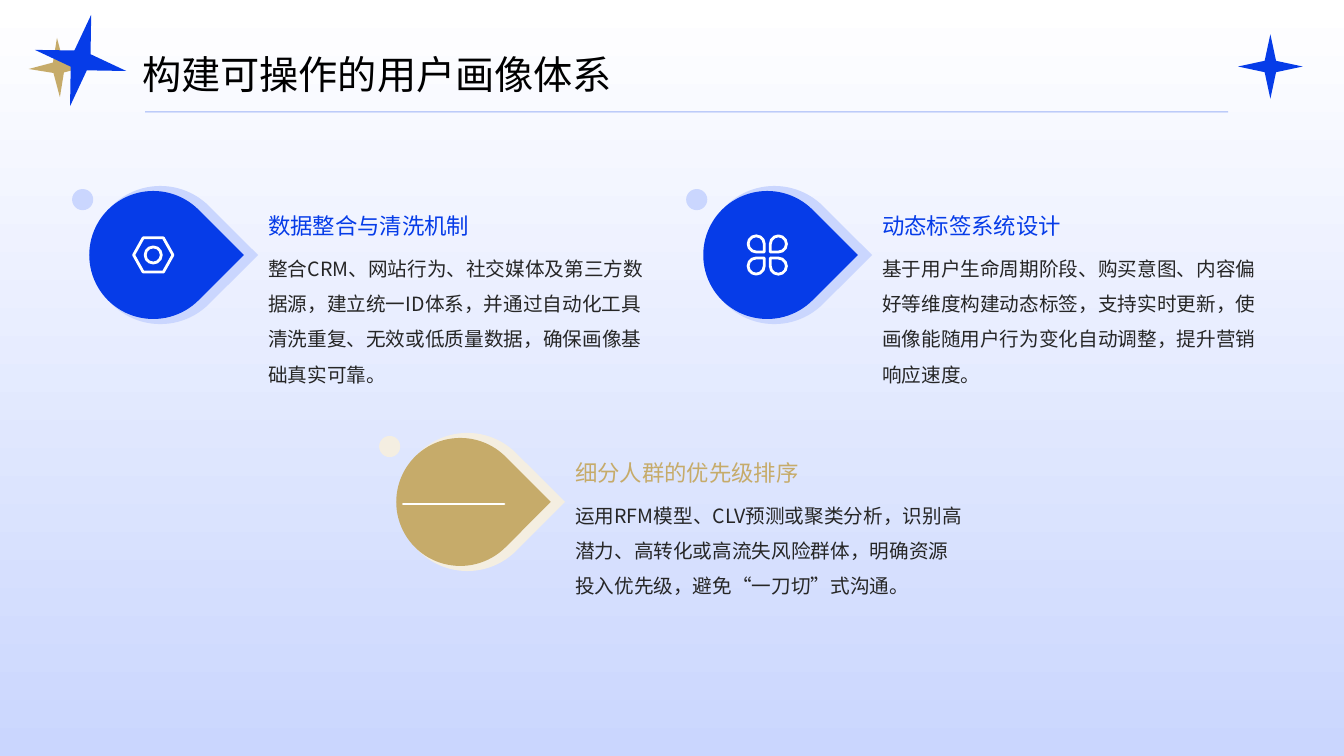
import math
import pptx
import pptx.util
import pptx.dml.color
import pptx.enum.shapes
import pptx.enum.text
import pptx.oxml.ns
import lxml.etree

TITLE = "构建可操作的用户画像体系"
CARDS = [
    dict(col=0, row=0, hue="blue", pale="sky", icon="nut",
         head="数据整合与清洗机制",
         body="整合CRM、网站行为、社交媒体及第三方数据源，建立统一ID体系，"
              "并通过自动化工具清洗重复、无效或低质量数据，确保画像基础真实可靠。"),
    dict(col=1, row=0, hue="blue", pale="sky", icon="clover",
         head="动态标签系统设计",
         body="基于用户生命周期阶段、购买意图、内容偏好等维度构建动态标签，"
              "支持实时更新，使画像能随用户行为变化自动调整，提升营销响应速度。"),
    dict(col=0.5, row=1, hue="gold", pale="cream", icon="page",
         head="细分人群的优先级排序",
         body="运用RFM模型、CLV预测或聚类分析，识别高潜力、高转化或高流失风险群体，"
              "明确资源投入优先级，避免“一刀切”式沟通。"),
]
STARS = [(0.58, 0.67, 0.59, 357.2, "gold"), (0.8, 0.6, 0.93, 13, "blue"),
         (12.6, 0.66, 0.64, 0, "blue")]
HUES = dict(white="FFFFFF", black="000000", ink="262626", blue="063CE8",
            sky="CAD6FE", gold="C6AB6A", cream="F4EEE1")
FACE = "Noto Sans CJK SC"
WIDE, HIGH = 13.33, 7.5
LEFT, TOP, STEP, DROP = 0.72, 1.59, 6.09, 2.45

KIND = pptx.enum.shapes.MSO_SHAPE
ANCHOR = pptx.enum.text.MSO_ANCHOR
inch = pptx.util.Inches

deck = pptx.Presentation()
deck.slide_width, deck.slide_height = inch(WIDE), inch(HIGH)
slide = deck.slides.add_slide(deck.slide_layouts[5])


def rgb(hue):
    return pptx.dml.color.RGBColor.from_string(HUES[hue])


def assign(thing, values):
    for key, value in values.items():
        setattr(thing, key, value)


def paint(shape, hue):
    shape.shadow.inherit = False
    shape.fill.solid()
    shape.fill.fore_color.rgb = rgb(hue)
    shape.line.fill.background()


def stroke(shape):
    shape.shadow.inherit = False
    shape.fill.background()
    shape.line.color.rgb = rgb("white")
    shape.line.width = pptx.util.Pt(2)


def center(kind, x, y, wide, high, turn=0):
    shape = slide.shapes.add_shape(
        kind, inch(x - wide / 2), inch(y - high / 2), inch(wide), inch(high))
    shape.rotation = turn
    return shape


def write(box, text, size, hue, space, anchor):
    frame = box.text_frame
    assign(frame, dict(word_wrap=True, vertical_anchor=anchor,
                       auto_size=pptx.enum.text.MSO_AUTO_SIZE.NONE,
                       margin_left=0, margin_right=0, margin_top=0, margin_bottom=0))
    para = frame.paragraphs[0]
    assign(para, dict(line_spacing=space, alignment=pptx.enum.text.PP_ALIGN.LEFT))
    run = para.add_run()
    run.text = text
    assign(run.font, dict(size=pptx.util.Pt(size), name=FACE))
    run.font.color.rgb = rgb(hue)
    east = lxml.etree.SubElement(run.font._element, pptx.oxml.ns.qn("a:ea"))
    east.set("typeface", FACE)


def label(x, y, wide, high, *style):
    box = slide.shapes.add_textbox(inch(x), inch(y), inch(wide), inch(high))
    write(box, *style)


def arc(x, y, radius, start, turn=90):
    angles = [math.radians(start + turn * i / 8) for i in range(9)]
    return [(x + radius * math.cos(a), y + radius * math.sin(a)) for a in angles]


def nut(x, y):
    shape = center(KIND.HEXAGON, x, y, 0.39, 0.34)
    shape.adjustments[0] = 0.28
    stroke(shape)
    stroke(center(KIND.OVAL, x, y, 0.16, 0.16))


def clover(x, y):
    for dx, dy, turn in [(-1, -1, 90), (1, -1, 180), (-1, 1, 0), (1, 1, 270)]:
        stroke(center(KIND.TEAR, x + 0.11 * dx, y + 0.11 * dy, 0.16, 0.16, turn))


def page(x, y):
    edge = ([(0.02, -0.19), (0.17, -0.04)] + arc(0.12, 0.14, 0.05, 0)
            + arc(-0.12, 0.14, 0.05, 90) + arc(-0.12, -0.14, 0.05, 180))
    fold = [(0.02, -0.19)] + arc(0.07, -0.09, 0.05, 180, -90) + [(0.17, -0.04)]
    place = lambda dots: [(x + dx, y + dy) for dx, dy in dots]
    edge, fold = place(edge), place(fold)
    path = slide.shapes.build_freeform(*edge[0], scale=inch(1))
    path.add_line_segments(edge[1:], close=True)
    path.move_to(*fold[0])
    path.add_line_segments(fold[1:], close=False)
    stroke(path.convert_to_shape())


ICONS = dict(nut=nut, clover=clover, page=page)


def card(col, row, hue, pale, icon, head, body):
    x, y = LEFT + STEP * col, TOP + DROP * row
    label(x + 1.94, y + 0.84, 3.84, 1.55, body, 14, "ink", 1.5, ANCHOR.TOP)
    label(x + 1.94, y, 3.84, 0.78, head, 16, hue, 1.3, ANCHOR.BOTTOM)
    midx, midy = x + 0.8, y + 0.94
    paint(center(KIND.TEAR, midx + 0.07, midy, 1.37, 1.37, 45), pale)
    paint(center(KIND.TEAR, midx, midy, 1.27, 1.27, 45), hue)
    ICONS[icon](midx, midy)
    paint(center(KIND.OVAL, x + 0.1, y + 0.39, 0.21, 0.21), pale)


def main():
    back = slide.background.fill
    back.gradient()
    back.gradient_angle = 270
    for stop, hue, spot in zip(back.gradient_stops, ("white", "sky"), (0, 1)):
        stop.color.rgb = rgb(hue)
        stop.position = spot

    title = slide.shapes.title
    assign(title, dict(left=inch(1.41), top=inch(0.37),
                       width=inch(7.9), height=inch(0.59)))
    write(title, TITLE, 28, "black", 1.3, ANCHOR.MIDDLE)

    for item in CARDS:
        card(**item)
    for x, y, size, turn, hue in STARS:
        paint(center(KIND.STAR_4_POINT, x, y, size, size, turn), hue)

    rule = center(KIND.ROUNDED_RECTANGLE, 6.81, 1.11, 10.74, 0.01)
    paint(rule, "blue")
    tint = rule._element.spPr.find(".//" + pptx.oxml.ns.qn("a:srgbClr"))
    lxml.etree.SubElement(tint, pptx.oxml.ns.qn("a:alpha")).set("val", "38000")
    deck.save("out.pptx")


if __name__ == "__main__":
    main()
